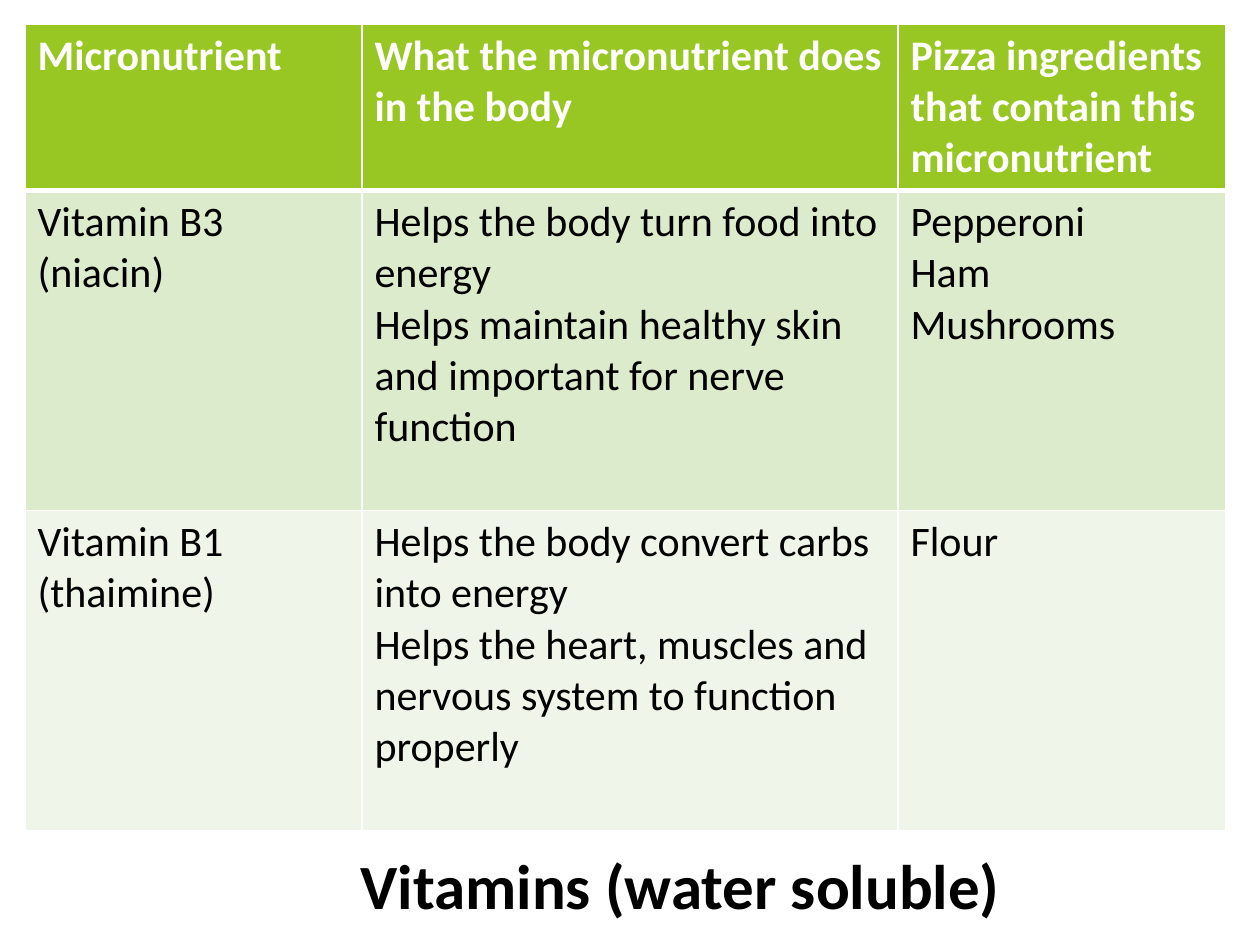
import dataclasses

import lxml.etree
import pptx
import pptx.dml.color
import pptx.enum.text
import pptx.oxml.ns
import pptx.util

PX = 914400 / 126


@dataclasses.dataclass(frozen=True)
class Theme:
    """Colours, font and type sizes of the slide."""

    font: str = "Calibri"
    title_size: int = 36
    table_size: int = 24
    text: str = "000000"
    header_text: str = "FFFFFF"
    border: str = "FFFFFF"
    fills: tuple = ("98C723", "DDEBCD", "EFF5E8")


THEME = Theme()
COLUMN_WIDTHS = (337, 536, 328)
ROW_HEIGHTS = (166, 320, 320)
MICRONUTRIENTS = (
    (
        "Micronutrient",
        "What the micronutrient does in the body",
        "Pizza ingredients that contain this micronutrient",
    ),
    (
        "Vitamin B3 (niacin)",
        "Helps the body turn food into energy\n"
        "Helps maintain healthy skin and important for nerve function",
        "Pepperoni\nHam\nMushrooms",
    ),
    (
        "Vitamin B1 (thaimine)",
        "Helps the body convert carbs into energy\n"
        "Helps the heart, muscles and nervous system to function properly",
        "Flour",
    ),
)


def emu(px):
    """Turn px into EMU."""
    return pptx.util.Emu(round(px * PX))


def rgb(value):
    """Turn a hex string into a colour."""
    return pptx.dml.color.RGBColor.from_string(value)


def style_font(font, size, color, bold):
    """Apply the theme font with the given size, colour and weight."""
    font.name = THEME.font
    font.size = pptx.util.Pt(size)
    font.bold = bold
    font.color.rgb = rgb(color)


def add_borders(cell, bottom_width):
    """Draw thin borders round a cell, with its own bottom width."""
    properties = cell._tc.get_or_add_tcPr()
    for side, width in (("L", 1), ("R", 1), ("T", 1), ("B", bottom_width)):
        line = lxml.etree.SubElement(
            properties, pptx.oxml.ns.qn(f"a:ln{side}"), w=str(pptx.util.Pt(width))
        )
        fill = lxml.etree.SubElement(line, pptx.oxml.ns.qn("a:solidFill"))
        lxml.etree.SubElement(fill, pptx.oxml.ns.qn("a:srgbClr"), val=THEME.border)


def fill_cell(cell, content, row_index):
    """Write and format one cell of the header or body."""
    is_header = row_index == 0
    add_borders(cell, 3 if row_index == 0 else 1)
    cell.fill.solid()
    cell.fill.fore_color.rgb = rgb(THEME.fills[row_index])
    cell.text = content
    color = THEME.header_text if is_header else THEME.text
    for paragraph in cell.text_frame.paragraphs:
        style_font(paragraph.font, THEME.table_size, color, is_header)


def add_micronutrient_table(slide, left, top):
    """Place the micronutrient table from its top left corner."""
    table = slide.shapes.add_table(
        len(ROW_HEIGHTS), len(COLUMN_WIDTHS), emu(left), emu(top),
        emu(sum(COLUMN_WIDTHS)), emu(sum(ROW_HEIGHTS)),
    ).table
    table.horz_banding = False
    for column, width in zip(table.columns, COLUMN_WIDTHS):
        column.width = emu(width)
    for row_index, contents in enumerate(MICRONUTRIENTS):
        table.rows[row_index].height = emu(ROW_HEIGHTS[row_index])
        for column_index, content in enumerate(contents):
            fill_cell(table.cell(row_index, column_index), content, row_index)


def place_title(slide, left, top, width, height):
    """Place the slide title in the given box."""
    title = slide.shapes.title
    title.left, title.top = emu(left), emu(top)
    title.width, title.height = emu(width), emu(height)
    frame = title.text_frame
    frame.text = "Vitamins (water soluble) "
    frame.auto_size = pptx.enum.text.MSO_AUTO_SIZE.NONE
    frame.vertical_anchor = pptx.enum.text.MSO_ANCHOR.MIDDLE
    heading = frame.paragraphs[0]
    heading.alignment = pptx.enum.text.PP_ALIGN.RIGHT
    style_font(heading.font, THEME.title_size, THEME.text, True)


def main():
    """Build and save the slide."""
    presentation = pptx.Presentation()
    presentation.slide_width, presentation.slide_height = emu(1260), emu(945)
    slide = presentation.slides.add_slide(presentation.slide_layouts[5])
    place_title(slide, 323, 849, 704, 71)
    add_micronutrient_table(slide, 25, 24)
    presentation.save("out.pptx")


if __name__ == "__main__":
    main()
